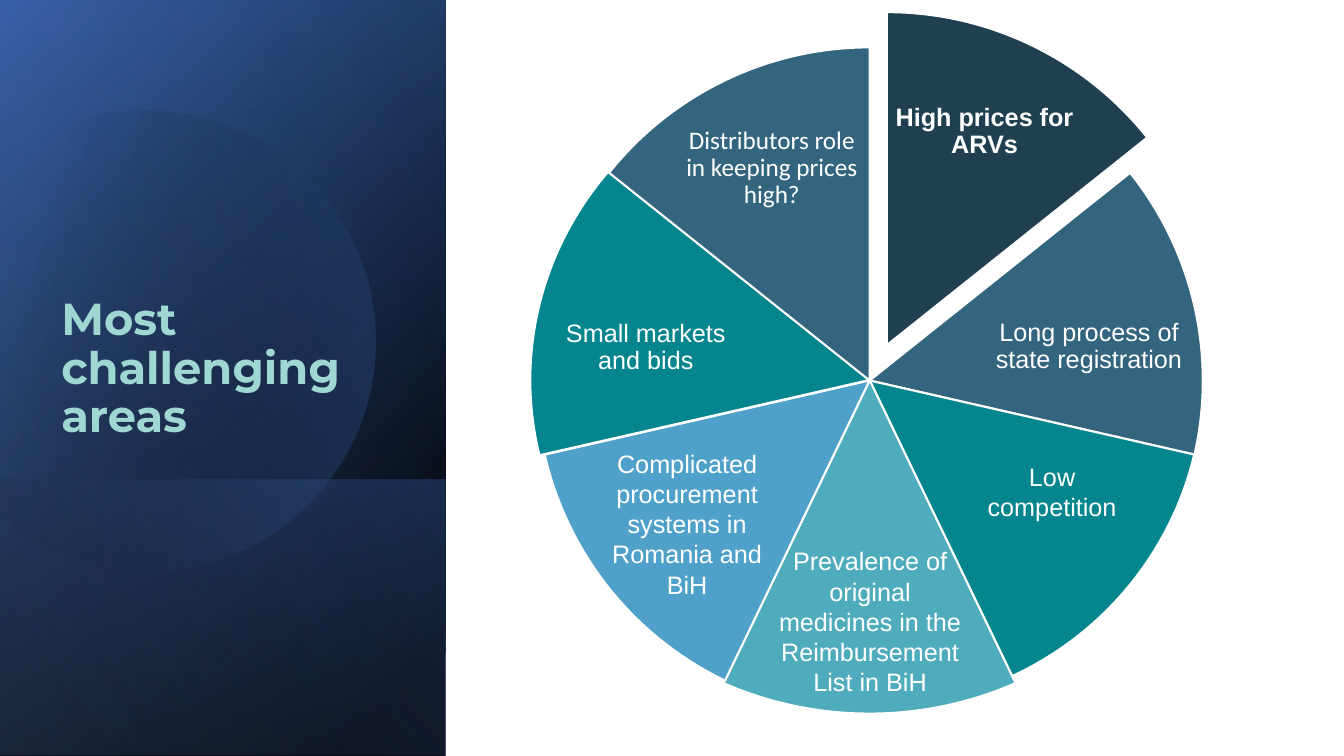
import math
from lxml import etree
from pptx import Presentation
from pptx import util as u
from pptx.dml.color import RGBColor
from pptx.enum import shapes, text
from pptx.oxml import ns

WHITE = RGBColor(0xFF, 0xFF, 0xFF)
BLACK = RGBColor(0x00, 0x00, 0x00)
DEEP_BLUE = RGBColor(0x2F, 0x54, 0x96)
BLUE = RGBColor(0x44, 0x72, 0xC4)
PALE_BLUE = RGBColor(0x8D, 0xA9, 0xDB)
MINT = RGBColor(0x9F, 0xD7, 0xD2)
NAVY = RGBColor(0x20, 0x40, 0x51)
SLATE = RGBColor(0x34, 0x65, 0x7E)
TEAL = RGBColor(0x05, 0x86, 0x8E)
AQUA = RGBColor(0x4F, 0xAC, 0xBC)
SKY = RGBColor(0x50, 0xA1, 0xCA)

FULL_TURN = 216
START = 162
ROUND = (5.32, 0.47, 6.61, 6.61)

SLICES = [
    (NAVY, (5.49, 0.12, 6.61, 6.61), "High prices for ARVs", (8.86, 0.74, 1.81, 1.14), {"bold": True}, {}),
    (SLATE, ROUND, "Long process of state registration", (9.84, 2.83, 1.92, 1.22), {}, {}),
    (TEAL, (5.32, 0.53, 6.61, 6.49), "Low competition", (9.57, 4.39, 1.73, 1.24), {},
     {"spacing": 1.0, "bottom": 0.29}),
    (AQUA, (5.16, 0.46, 6.93, 6.62),
     "Prevalence of original medicines in the Reimbursement List in BiH",
     (7.7, 5.67, 1.86, 1.26), {}, {"spacing": 1.0, "bottom": 0.29}),
    (SKY, ROUND, "Complicated procurement systems in Romania and BiH",
     (5.95, 4.4, 1.73, 1.26), {}, {"spacing": 1.0, "top": 0.35}),
    (TEAL, (5.26, 0.53, 6.73, 6.48), "Small markets and bids", (5.43, 2.85, 1.95, 1.2), {}, {}),
    (SLATE, ROUND, "Distributors role in keeping prices high?",
     (6.75, 1.1, 1.81, 1.14), {"name": "Calibri"}, {}),
]

PANELS = [
    ((-1.54, 1.54, 7.5, 4.42), 50, [(0, BLACK, 100), (8, BLACK, 100), (100, DEEP_BLUE, 100)]),
    ((-1.54, 1.55, 7.5, 4.42), 30, [(0, BLACK, 0), (99, BLUE, 46), (100, BLUE, 46)]),
    ((0.84, 3.92, 2.74, 4.42), 130, [(0, BLUE, 29), (2, BLUE, 29), (100, BLACK, 30)]),
]
SHEEN = ((-1.54, 1.53, 7.5, 4.42), 120, [(0, BLACK, 0), (99, PALE_BLUE, 11), (100, PALE_BLUE, 11)])
DISC_GLOW = (30, [(0, BLACK, 0), (29, BLACK, 0), (100, BLUE, 43)])


class SlideBuilder:
    """Draws styled elements on one slide."""

    label_font = {"name": "Arial", "size": u.Pt(18), "bold": False}

    def __init__(self, slide):
        self.shapes = slide.shapes

    def solid(self, kind, box, color, outline=None):
        shape = self.shapes.add_shape(kind, *map(u.Inches, box))
        shape.shadow.inherit = False
        shape.fill.solid()
        shape.fill.fore_color.rgb = color
        if outline is None:
            shape.line.fill.background()
        else:
            shape.line.color.rgb = outline
            shape.line.width = u.Pt(1.5)
        return shape

    def gradient(self, shape, angle, stops):
        shape.shadow.inherit = False
        shape.line.fill.background()
        shape.fill.gradient()
        grad = shape._element.spPr.find(ns.qn("a:gradFill"))
        grad.set("rotWithShape", "1")
        grad.find(ns.qn("a:lin")).set("ang", str(angle * 60000))
        stop_list = grad.find(ns.qn("a:gsLst"))
        for old_stop in list(stop_list):
            stop_list.remove(old_stop)
        for position, color, opacity in stops:
            stop = etree.SubElement(stop_list, ns.qn("a:gs"), pos=str(position * 1000))
            tint = etree.SubElement(stop, ns.qn("a:srgbClr"), val=str(color))
            etree.SubElement(tint, ns.qn("a:alpha"), val=str(opacity * 1000))

    def panel(self, box, angle, stops):
        panel = self.solid(shapes.MSO_SHAPE.RECTANGLE, box, BLACK)
        panel.rotation = 90
        panel._element.spPr.find(ns.qn("a:xfrm")).set("flipH", "1")
        self.gradient(panel, angle, stops)

    def disc(self, center, radius, first, last, rotation, glow):
        steps = 120
        angles = [math.radians(first + (last - first) * i / steps) for i in range(steps + 1)]
        rim = [(u.Inches(center[0] + radius * math.cos(a)),
                u.Inches(center[1] + radius * math.sin(a))) for a in angles]
        outline = self.shapes.build_freeform(*rim[0])
        outline.add_line_segments(rim[1:], close=True)
        disc = outline.convert_to_shape()
        disc.rotation = rotation
        self.gradient(disc, *glow)

    def slice(self, box, color, start, end):
        wedge = self.solid(shapes.MSO_SHAPE.PIE, box, color, WHITE)
        wedge.adjustments[0] = start
        wedge.adjustments[1] = end

    def words(self, box, content, color, font, frame_format, paragraph_format):
        frame = self.shapes.add_textbox(*map(u.Inches, box)).text_frame
        paragraph = frame.paragraphs[0]
        run = paragraph.add_run()
        run.text = content
        run.font.color.rgb = color
        formats = [(frame, {"word_wrap": True, **frame_format}),
                   (paragraph, paragraph_format), (run.font, font)]
        for target, values in formats:
            for key, value in values.items():
                setattr(target, key, value)

    def label(self, box, content, font, spacing=0.9, top=0.02, bottom=0.02):
        margins = {"margin_left": 0.02, "margin_right": 0.02,
                   "margin_top": top, "margin_bottom": bottom}
        frame_format = {side: u.Inches(size) for side, size in margins.items()}
        frame_format["vertical_anchor"] = text.MSO_ANCHOR.MIDDLE
        self.words(box, content, WHITE, {**self.label_font, **font}, frame_format,
                   {"alignment": text.PP_ALIGN.CENTER, "line_spacing": spacing})


def main():
    deck = Presentation()
    deck.slide_width = u.Inches(13.33)
    deck.slide_height = u.Inches(7.5)
    builder = SlideBuilder(deck.slides.add_slide(deck.slide_layouts[6]))

    builder.solid(shapes.MSO_SHAPE.RECTANGLE, (0, 0, 13.33, 7.5), WHITE)
    for panel in PANELS:
        builder.panel(*panel)
    builder.disc((1.43, 3.34), 2.29, -117.5, 149.7, 343.9, DISC_GLOW)
    builder.panel(*SHEEN)
    builder.words((0.51, 2.9, 3.5, 3.7), "Most challenging areas", MINT,
                  {"name": "Montserrat", "size": u.Pt(32), "bold": True},
                  {}, {"line_spacing": 0.9})

    sweep = FULL_TURN / len(SLICES)
    for index, (color, pie_box, content, label_box, font, layout) in enumerate(SLICES):
        start = (START + index * sweep) % FULL_TURN
        builder.slice(pie_box, color, start, (start + sweep) % FULL_TURN)
        builder.label(label_box, content, font, **layout)

    deck.save("out.pptx")


if __name__ == "__main__":
    main()
